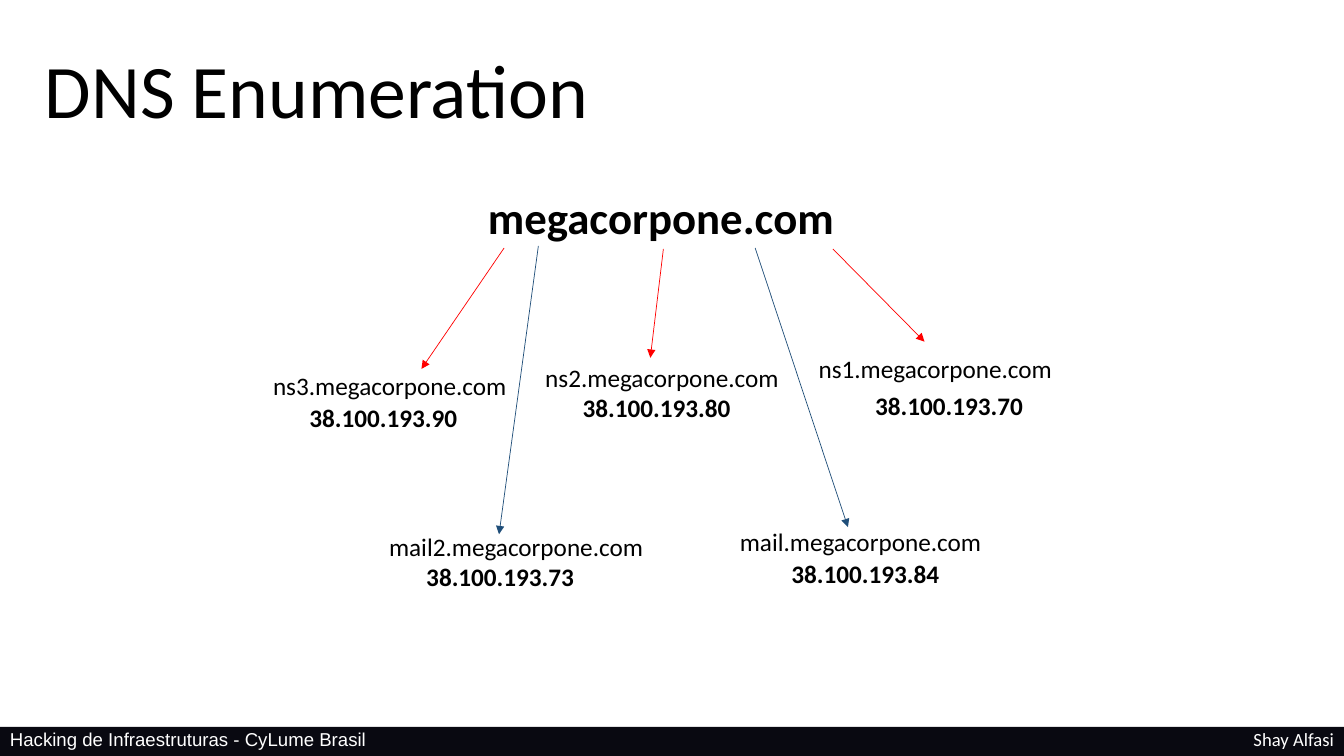
from dataclasses import dataclass

from lxml import etree
from pptx import Presentation
from pptx import util as u
from pptx.dml import color
from pptx.enum import shapes, text
from pptx.oxml import ns


@dataclass(frozen=True)
class Theme:
    ink: str = "000000"
    paper: str = "FFFFFF"
    bar: str = "090911"
    name_server: str = "FF0000"
    mail_server: str = "1F4E79"
    font: str = "Calibri"
    footer_font: str = "Arial"
    title_size: float = 54
    domain_size: float = 32
    host_size: float = 18
    footer_size: float = 13.3
    arrow_width: float = 0.5


class SlideBuilder:
    """Places elements on a grid of 100 columns by 100 rows."""

    def __init__(self, presentation, theme):
        self.theme = theme
        self.column = presentation.slide_width / 100
        self.row = presentation.slide_height / 100
        self.slide = presentation.slides.add_slide(presentation.slide_layouts[6])
        fill = self.slide.background.fill
        fill.solid()
        fill.fore_color.rgb = color.RGBColor.from_string(theme.paper)

    def place(self, *lengths):
        """Turn alternating columns and rows into slide lengths."""
        units = (self.column, self.row) * 2
        return [round(length * unit) for length, unit in zip(lengths, units)]

    def bar(self, *box):
        shape = self.slide.shapes.add_shape(
            shapes.MSO_SHAPE.RECTANGLE, *self.place(*box))
        shape.shadow.inherit = False
        shape.fill.solid()
        shape.fill.fore_color.rgb = color.RGBColor.from_string(self.theme.bar)
        shape.line.fill.background()

    def label(self, wording, box, size, bold=False, ink=None, font=None,
              align=text.PP_ALIGN.LEFT, wrap=False):
        shape = self.slide.shapes.add_textbox(*self.place(*box))
        frame = shape.text_frame
        frame.word_wrap = wrap
        frame.auto_size = text.MSO_AUTO_SIZE.NONE
        paragraph = frame.paragraphs[0]
        paragraph.alignment = align
        run = paragraph.add_run()
        run.text = wording
        run.font.name = font or self.theme.font
        run.font.size = u.Pt(size)
        run.font.bold = bold
        run.font.color.rgb = color.RGBColor.from_string(ink or self.theme.ink)
        return frame

    def title(self, wording, box):
        frame = self.label(wording, box, self.theme.title_size,
                           align=text.PP_ALIGN.CENTER, wrap=True)
        frame.vertical_anchor = text.MSO_ANCHOR.BOTTOM
        frame.paragraphs[0].line_spacing = 0.9

    def arrow(self, ends, ink):
        connector = self.slide.shapes.add_connector(
            shapes.MSO_CONNECTOR.STRAIGHT, *self.place(*ends))
        connector.line.color.rgb = color.RGBColor.from_string(ink)
        connector.line.width = u.Pt(self.theme.arrow_width)
        line = connector.line._get_or_add_ln()
        etree.SubElement(line, ns.qn("a:tailEnd"), type="triangle")
        etree.SubElement(connector._element.spPr, ns.qn("a:effectLst"))

    def host(self, name, name_box, address, address_corner, ends, ink):
        size = self.theme.host_size
        self.arrow(ends, ink)
        self.label(name, (*name_box, 5.33), size)
        self.label(address, (*address_corner, 12.6, 5.33), size, bold=True)


def main():
    presentation = Presentation()
    presentation.slide_width = u.Inches(13.33)
    presentation.slide_height = u.Inches(7.5)
    theme = Theme()
    builder = SlideBuilder(presentation, theme)

    # Footer
    builder.bar(0, 96.13, 100, 3.87)
    builder.label("Hacking de Infraestruturas - CyLume Brasil",
                  (0, 95.6, 62.64, 4.4), theme.footer_size,
                  ink=theme.paper, font=theme.footer_font, wrap=True)
    builder.label("Shay Alfasi", (52, 95.6, 48, 4.4), theme.footer_size,
                  ink=theme.paper, align=text.PP_ALIGN.RIGHT, wrap=True)

    # Title and root domain
    builder.title("DNS Enumeration", (0, 6, 47.11, 12.53))
    domain = "megacorpone.com"
    builder.label(domain, (35.56, 24.4, 27.46, 8.53),
                  theme.domain_size, bold=True)

    # Hosts: name, its box, last octet, address corner, arrow ends, colour
    red, blue = theme.name_server, theme.mail_server
    hosts = [
        ("ns1", (60.17, 46.13, 19.05), 70, (64.37, 50.93),
         (61.97, 32.93, 68.79, 45.2), red),
        ("ns2", (39.83, 47.2, 19.05), 80, (42.61, 51.2),
         (49.36, 32.93, 48.39, 47.33), red),
        ("ns3", (19.58, 48.27, 19.05), 90, (22.28, 52.53),
         (37.51, 32.8, 31.36, 48.8), red),
        ("mail", (54.31, 68.93, 20.1), 84, (58.14, 73.2),
         (56.19, 32.8, 63.09, 69.73), blue),
        ("mail2", (28.21, 69.6, 20.63), 73, (30.98, 73.6),
         (40.06, 32.53, 37.13, 70.67), blue),
    ]
    for name, name_box, octet, corner, ends, ink in hosts:
        builder.host(f"{name}.{domain}", name_box,
                     f"38.100.193.{octet}", corner, ends, ink)

    presentation.save("out.pptx")


if __name__ == "__main__":
    main()
